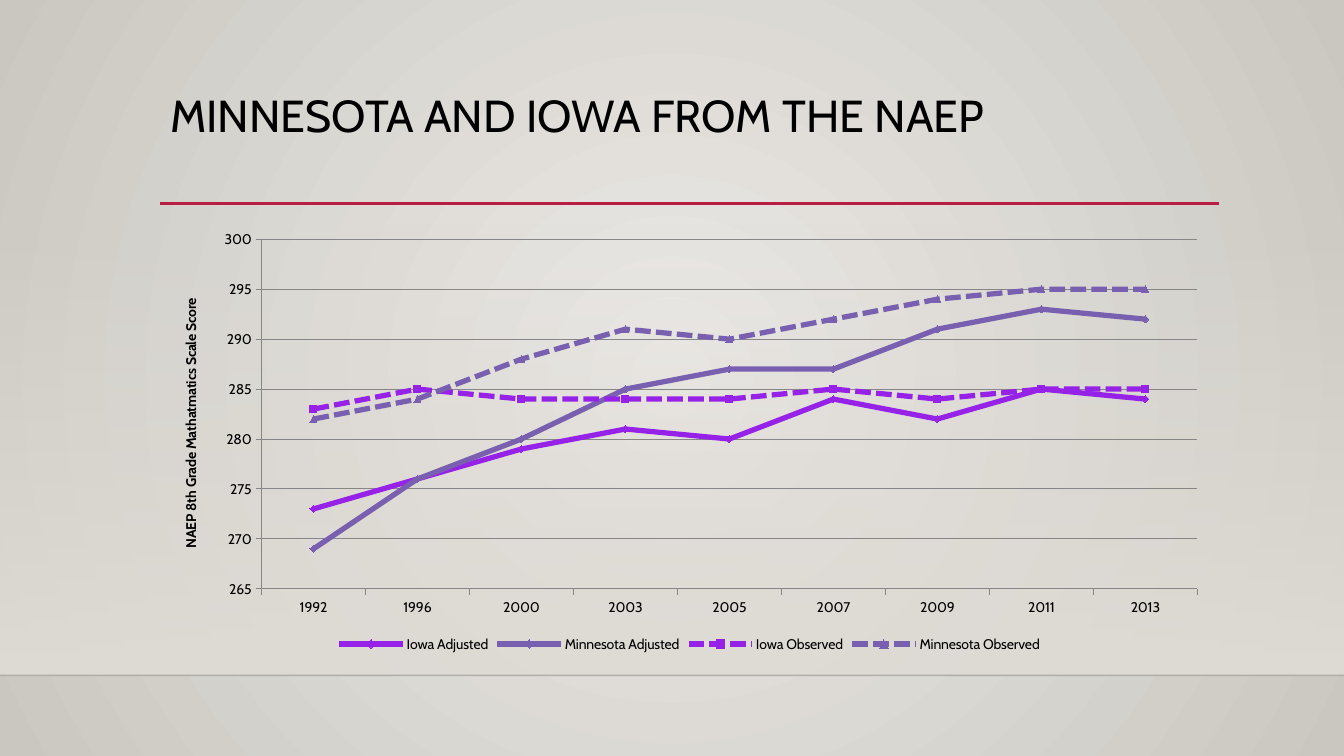
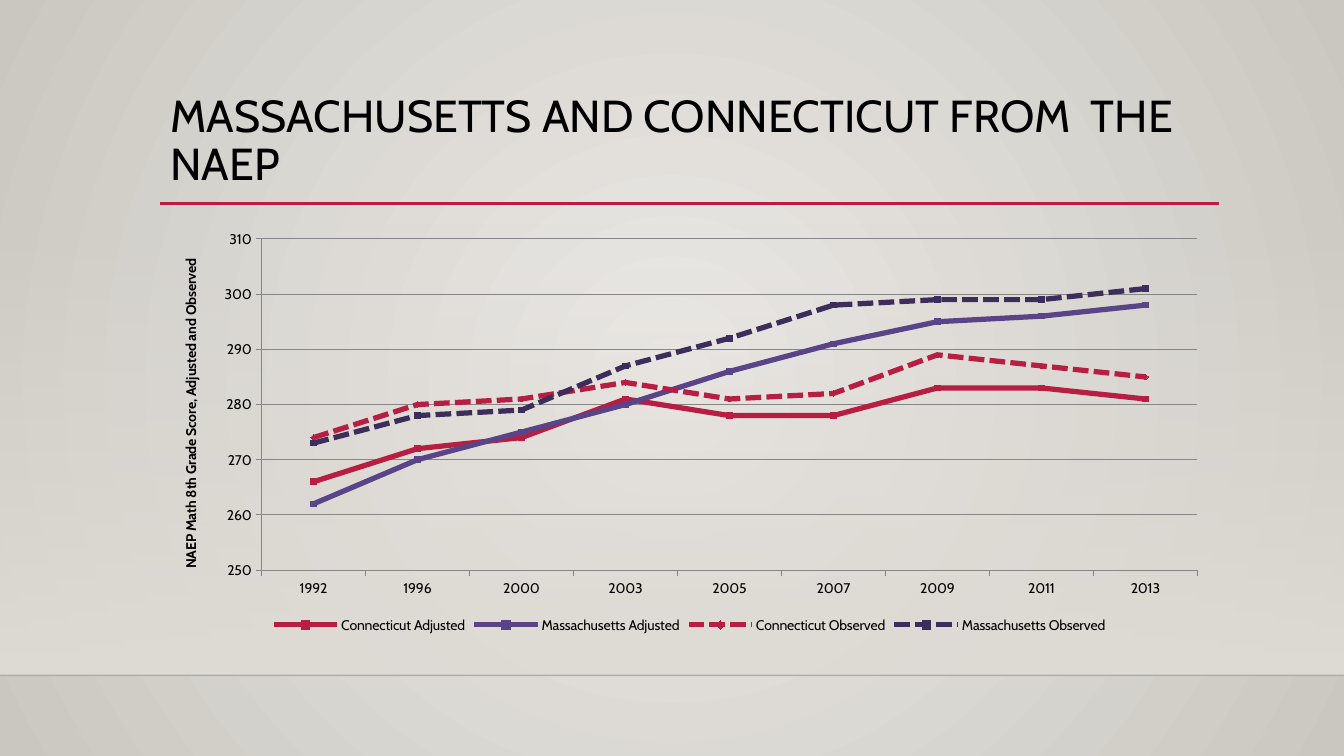
from dataclasses import dataclass

from lxml.etree import SubElement
from pptx import Presentation
from pptx.chart.data import CategoryChartData as ChartData
from pptx.dml.color import RGBColor as Rgb
from pptx.enum.chart import XL_CHART_TYPE as Kind
from pptx.enum.chart import XL_LEGEND_POSITION as Place
from pptx.enum.chart import XL_MARKER_STYLE as Mark
from pptx.enum.chart import XL_TICK_MARK as Tick
from pptx.enum.dml import MSO_LINE as Dash
from pptx.enum.shapes import MSO_CONNECTOR as Link
from pptx.enum.shapes import MSO_SHAPE as Form
from pptx.enum.text import MSO_ANCHOR as Anchor
from pptx.oxml.ns import qn
from pptx.util import Cm, Pt

FONT = "Cabin"
BLACK, RED, GRID = "000000", "B71E42", "868686"
PURPLE, LILAC, VIOLET, PLUM = "9622E7", "795FAF", "594487", "3C2D5A"
GLOW, EDGE, SAND = "ECEAE7", "CAC7C1", "DFDBD5"
WIDE, HIGH = 33.87, 19.05
LEFT, SPAN = 4.04, 26.67
RULE, FLOOR, BAND = 5.13, 17.02, 5.61
YEARS = (1992, 1996, 2000, 2003, 2005, 2007, 2009, 2011, 2013)


@dataclass(frozen=True)
class Trend:
    name: str
    vals: tuple
    shade: str
    mark: Mark
    dashed: bool = False
    core: str = ""


@dataclass(frozen=True)
class Page:
    title: str
    label: str
    low: int
    high: int
    step: int
    tall: float
    size: int
    trends: tuple


PAGES = (
    Page(
        "MINNESOTA AND IOWA FROM THE NAEP",
        "NAEP 8th Grade Mathatmatics Scale Score",
        265, 300, 5, 10.94, 5,
        (
            Trend("Iowa Adjusted",
                  (273, 276, 279, 281, 280, 284, 282, 285, 284),
                  PURPLE, Mark.DIAMOND),
            Trend("Minnesota Adjusted",
                  (269, 276, 280, 285, 287, 287, 291, 293, 292),
                  LILAC, Mark.DIAMOND),
            Trend("Iowa Observed",
                  (283, 285, 284, 284, 284, 285, 284, 285, 285),
                  PURPLE, Mark.SQUARE, True),
            Trend("Minnesota Observed",
                  (282, 284, 288, 291, 290, 292, 294, 295, 295),
                  LILAC, Mark.TRIANGLE, True),
        ),
    ),
    Page(
        "MASSACHUSETTS AND CONNECTICUT FROM  THE NAEP",
        "NAEP Math 8th Grade Score, Adjusted and Observed",
        250, 310, 10, 10.46, 4,
        (
            Trend("Connecticut Adjusted",
                  (266, 272, 274, 281, 278, 278, 283, 283, 281),
                  RED, Mark.SQUARE),
            Trend("Massachusetts Adjusted",
                  (262, 270, 275, 280, 286, 291, 295, 296, 298),
                  VIOLET, Mark.SQUARE),
            Trend("Connecticut Observed",
                  (274, 280, 281, 284, 281, 282, 289, 287, 285),
                  RED, Mark.DIAMOND, True),
            Trend("Massachusetts Observed",
                  (273, 278, 279, 287, 292, 298, 299, 299, 301),
                  PLUM, Mark.SQUARE, True, VIOLET),
        ),
    ),
)


def tint(part, shade: str) -> None:
    part.rgb = Rgb.from_string(shade)


def paint(fill, shade: str) -> None:
    fill.solid()
    tint(fill.fore_color, shade)


def blend(fill, first: str, last: str) -> None:
    fill.gradient()
    for stop, shade in zip(fill.gradient_stops, (first, last)):
        tint(stop.color, shade)


def fade(root, share: int) -> None:
    shade = next(root.iter(qn("a:srgbClr")))
    SubElement(shade, qn("a:alpha"), val=str(share * 1000))


def style(font, size: int, bold: bool = False) -> None:
    font.name, font.size, font.bold = FONT, Pt(size), bold
    tint(font.color, BLACK)


def draw_rule(slide, left: float, right: float, top: float,
              shade: str, width: float):
    rule = slide.shapes.add_connector(
        Link.STRAIGHT, Cm(left), Cm(top), Cm(right), Cm(top))
    tint(rule.line.color, shade)
    rule.line.width = Pt(width)
    SubElement(rule.element.spPr, qn("a:effectLst"))
    return rule


def draw_back(slide) -> None:
    blend(slide.background.fill, GLOW, EDGE)
    grad = next(slide.element.iter(qn("a:gradFill")))
    grad.remove(grad.find(qn("a:lin")))
    ring = SubElement(grad, qn("a:path"), path="circle")
    SubElement(ring, qn("a:fillToRect"), {side: "50000" for side in "ltrb"})

    band = slide.shapes.add_shape(
        Form.RECTANGLE, 0, Cm(BAND), Cm(WIDE), Cm(FLOOR - BAND))
    band.shadow.inherit = False
    band.line.fill.background()
    blend(band.fill, SAND, SAND)
    band.fill.gradient_angle = 270
    fade(band.element, 0)

    fade(draw_rule(slide, 0, WIDE, FLOOR, "000001", 1).element, 20)
    draw_rule(slide, LEFT, LEFT + SPAN, RULE, RED, 2.5)


def draw_title(slide, text: str) -> None:
    frame = slide.shapes.add_textbox(
        Cm(LEFT), Cm(2.24), Cm(SPAN), Cm(2.92)).text_frame
    frame.word_wrap = True
    frame.vertical_anchor = Anchor.TOP
    frame.text = text
    line = frame.paragraphs[0]
    line.line_spacing = 0.9
    style(line.runs[0].font, 32)


def draw_trend(plot, trend: Trend, size: int) -> None:
    plot.smooth = False
    line = plot.format.line
    tint(line.color, trend.shade)
    line.width = Pt(3.75)
    if trend.dashed:
        line.dash_style = Dash.SQUARE_DOT
    mark = plot.marker
    mark.style, mark.size = trend.mark, size
    core = trend.core or trend.shade
    paint(mark.format.fill, core)
    tint(mark.format.line.color, core)


def draw_chart(slide, page: Page) -> None:
    data = ChartData(number_format="0")
    data.categories = [str(year) for year in YEARS]
    for trend in page.trends:
        data.add_series(trend.name, trend.vals)
    chart = slide.shapes.add_chart(
        Kind.LINE_MARKERS, Cm(LEFT), Cm(5.6), Cm(SPAN), Cm(page.tall),
        data).chart
    style(chart.font, 10)
    chart.has_title = False
    chart.has_legend = True
    chart.legend.position = Place.BOTTOM
    chart.legend.include_in_layout = False
    chart.plots[0].vary_by_categories = False

    scale = chart.value_axis
    scale.minimum_scale, scale.maximum_scale = page.low, page.high
    scale.major_unit = page.step
    scale.has_major_gridlines = True
    scale.tick_labels.number_format = "0"
    scale.tick_labels.number_format_is_linked = False
    frame = scale.axis_title.text_frame
    frame.text = page.label
    style(frame.paragraphs[0].runs[0].font, 10, True)
    for axis in (scale, chart.category_axis):
        axis.major_tick_mark = Tick.OUTSIDE
        axis.minor_tick_mark = Tick.NONE
    for part in (scale, scale.major_gridlines, chart.category_axis):
        tint(part.format.line.color, GRID)
        part.format.line.width = Pt(0.75)

    for plot, trend in zip(chart.plots[0].series, page.trends):
        draw_trend(plot, trend, page.size)


def main() -> None:
    deck = Presentation()
    deck.slide_width, deck.slide_height = Cm(WIDE), Cm(HIGH)
    for page in PAGES:
        slide = deck.slides.add_slide(deck.slide_layouts[6])
        draw_back(slide)
        draw_title(slide, page.title)
        draw_chart(slide, page)
    deck.save("out.pptx")


if __name__ == "__main__":
    main()
